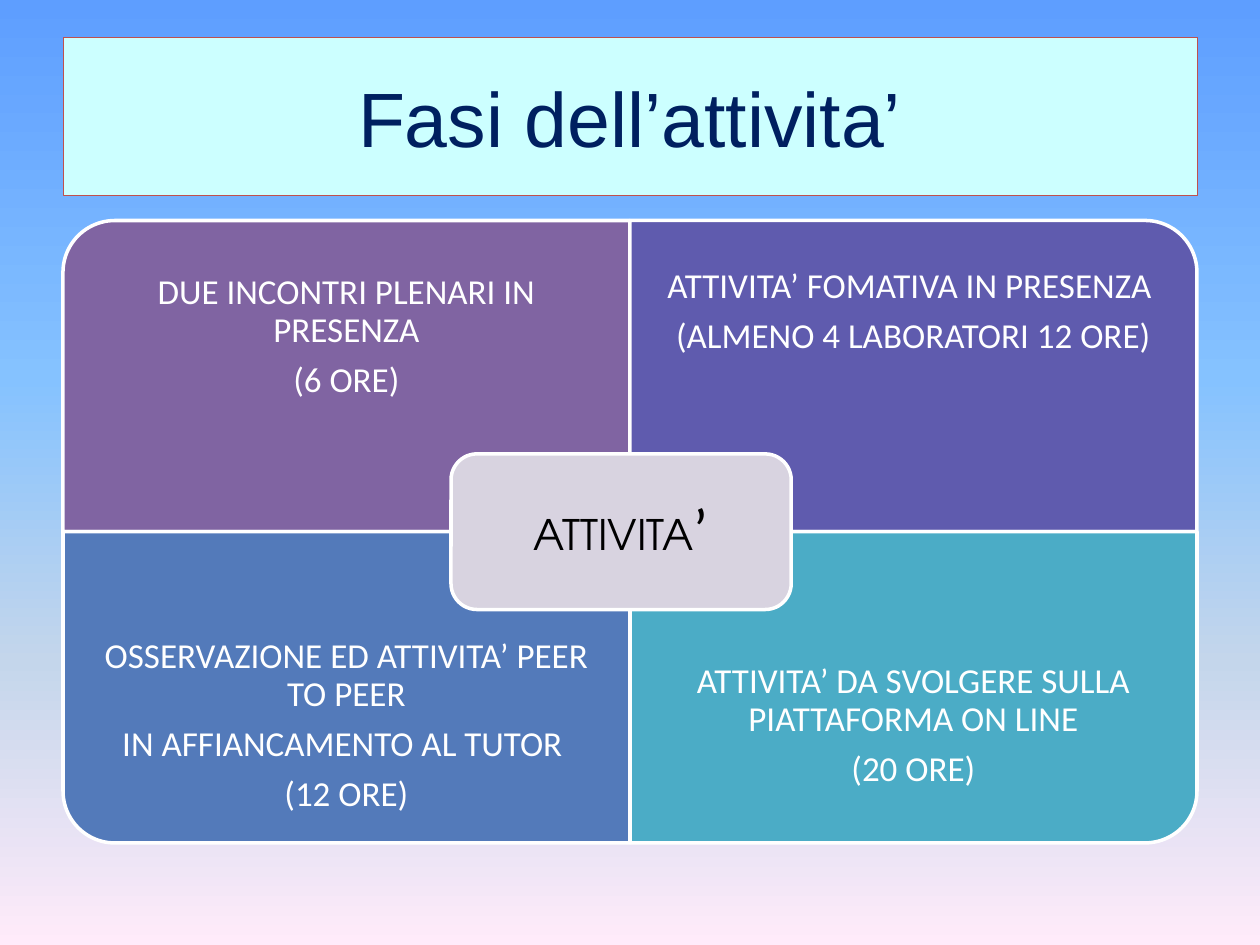
import lxml.etree
import pptx
import pptx.dml.color
import pptx.enum.shapes
import pptx.enum.text
import pptx.oxml.ns
import pptx.util

Inches = pptx.util.Inches
Pt = pptx.util.Pt
SHAPES = pptx.enum.shapes.MSO_SHAPE
CENTER = pptx.enum.text.PP_ALIGN.CENTER
MIDDLE = pptx.enum.text.MSO_ANCHOR.MIDDLE
color = pptx.dml.color.RGBColor.from_string


def add_panel(kind, left, top, width, height, fill):
    shape = slide.shapes.add_shape(
        kind, Inches(left), Inches(top), Inches(width), Inches(height))
    shape.shadow.inherit = False
    shape.fill.solid()
    shape.fill.fore_color.rgb = color(fill)
    shape.line.color.rgb = color("FFFFFF")
    shape.line.width = Pt(2)
    return shape


def set_up_frame(frame, inset):
    frame.word_wrap = True
    frame.vertical_anchor = MIDDLE
    frame.margin_left = frame.margin_right = Inches(inset)
    frame.margin_top = frame.margin_bottom = Inches(inset)


presentation = pptx.Presentation()
presentation.slide_width = Inches(10)
presentation.slide_height = Inches(7.5)
slide = presentation.slides.add_slide(presentation.slide_layouts[5])

# Background gradient, top to bottom
background = slide.background.fill
background.gradient()
background.gradient_angle = 270
qn = pptx.oxml.ns.qn
stops = next(slide.background._cSld.iter(qn("a:gsLst")))
for stop in list(stops):
    stops.remove(stop)
for percent, tone in [(0, "5E9EFF"), (40, "85C2FF"), (70, "C4D6EB"), (100, "FFEBFA")]:
    stop = lxml.etree.SubElement(stops, qn("a:gs"), pos=str(percent * 1000))
    lxml.etree.SubElement(stop, qn("a:srgbClr"), val=tone)

# Title
LEFT, COLUMN = 0.5, 4.5
title = slide.shapes.title
title.left, title.top = Inches(LEFT), Inches(0.3)
title.width, title.height = Inches(2 * COLUMN), Inches(1.25)
title.fill.solid()
title.fill.fore_color.rgb = color("CCFFFF")
title.line.color.rgb = color("C0504D")
title.line.width = Pt(0.5)
title.text_frame.vertical_anchor = MIDDLE
paragraph = title.text_frame.paragraphs[0]
paragraph.text = "Fasi dell’attivita’"
paragraph.alignment = CENTER
paragraph.font.name = "Arial"
paragraph.font.size = Pt(44)
paragraph.font.color.rgb = color("002060")

# Quadrants: column, row, rotation, fill, extra space under the text, lines
TOP, ROW = 1.75, 2.47
TEXT_HEIGHT = ROW * 0.75
quadrants = [
    (0, 0, 270, "8064A2", 0, ["DUE INCONTRI PLENARI IN PRESENZA", "(6 ORE)"]),
    (1, 0, 0, "5F5BAE", 0.4,
     ["ATTIVITA’ FOMATIVA IN PRESENZA ", "(ALMENO 4 LABORATORI 12 ORE)"]),
    (0, 1, 180, "537ABA", 0,
     ["OSSERVAZIONE ED ATTIVITA’ PEER TO PEER", "IN AFFIANCAMENTO AL TUTOR ", "(12 ORE)"]),
    (1, 1, 90, "4BACC6", 0,
     ["ATTIVITA’ DA SVOLGERE SULLA PIATTAFORMA ON LINE", "(20 ORE)"]),
]
for column, row, rotation, fill, space_below, lines in quadrants:
    left, top = LEFT + column * COLUMN, TOP + row * ROW
    # A quarter turn swaps width and height around the same centre
    width, height = (ROW, COLUMN) if rotation % 180 else (COLUMN, ROW)
    panel = add_panel(SHAPES.ROUND_1_RECTANGLE, left + (COLUMN - width) / 2,
                      top + (ROW - height) / 2, width, height, fill)
    panel.rotation = rotation

    # Text keeps to the outer three quarters, clear of the centre label
    text_top = top + row * (ROW - TEXT_HEIGHT)
    box = slide.shapes.add_textbox(
        Inches(left), Inches(text_top), Inches(COLUMN), Inches(TEXT_HEIGHT))
    frame = box.text_frame
    set_up_frame(frame, 0.16)
    frame.margin_bottom = Inches(0.16 + space_below)
    frame.text = "\n".join(lines)
    for paragraph in frame.paragraphs:
        paragraph.alignment = CENTER
        paragraph.line_spacing = 0.9
        paragraph.space_after = Pt(7)
        paragraph.font.name = "Calibri"
        paragraph.font.size = Pt(20)
        paragraph.font.color.rgb = color("FFFFFF")

# Centre label
label = add_panel(SHAPES.ROUNDED_RECTANGLE, 3.58, TOP + ROW * 0.75, 2.7, ROW / 2, "D8D3E0")
set_up_frame(label.text_frame, 0.1)
paragraph = label.text_frame.paragraphs[0]
paragraph.alignment = CENTER
paragraph.line_spacing = 0.9
for text, font, size in [("ATTIVITA", "TeX Gyre Adventor", 24), ("’", "Calibri", 34)]:
    run = paragraph.add_run()
    run.text = text
    run.font.name = font
    run.font.size = Pt(size)
    run.font.color.rgb = color("000000")

presentation.save("out.pptx")
